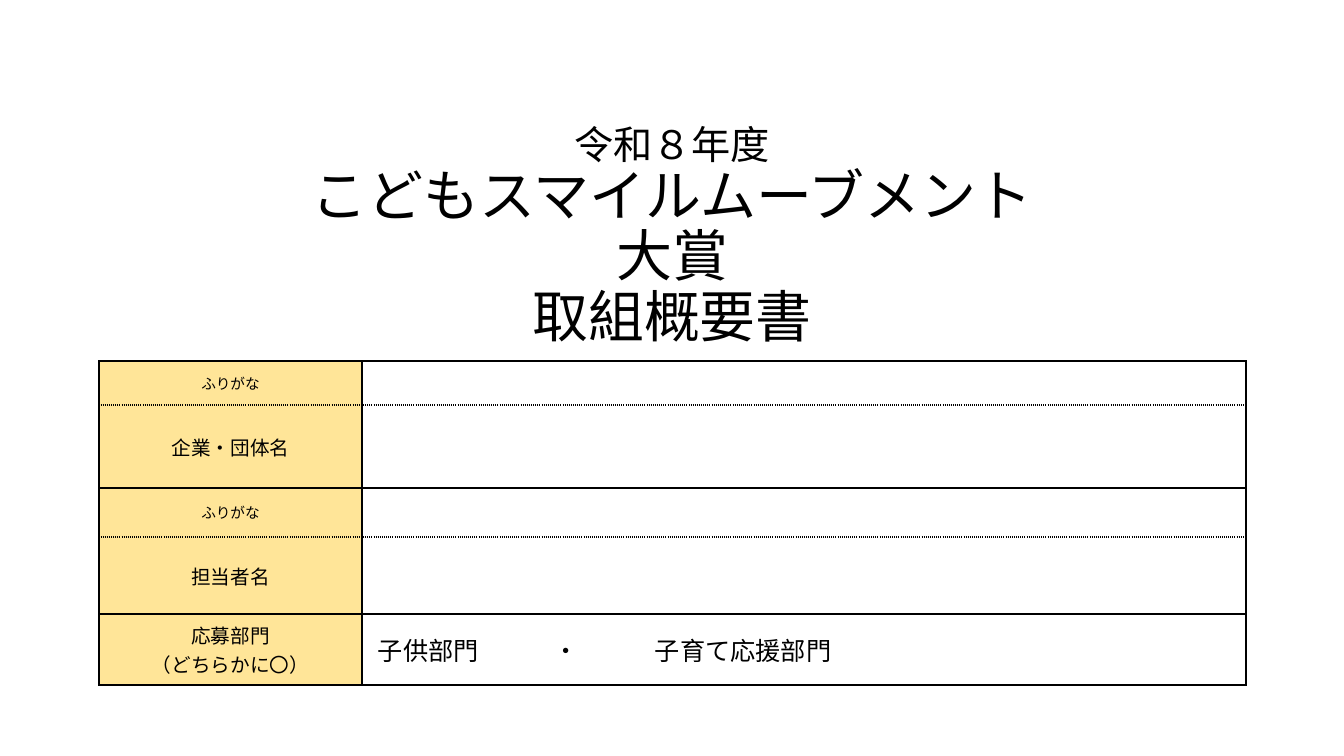
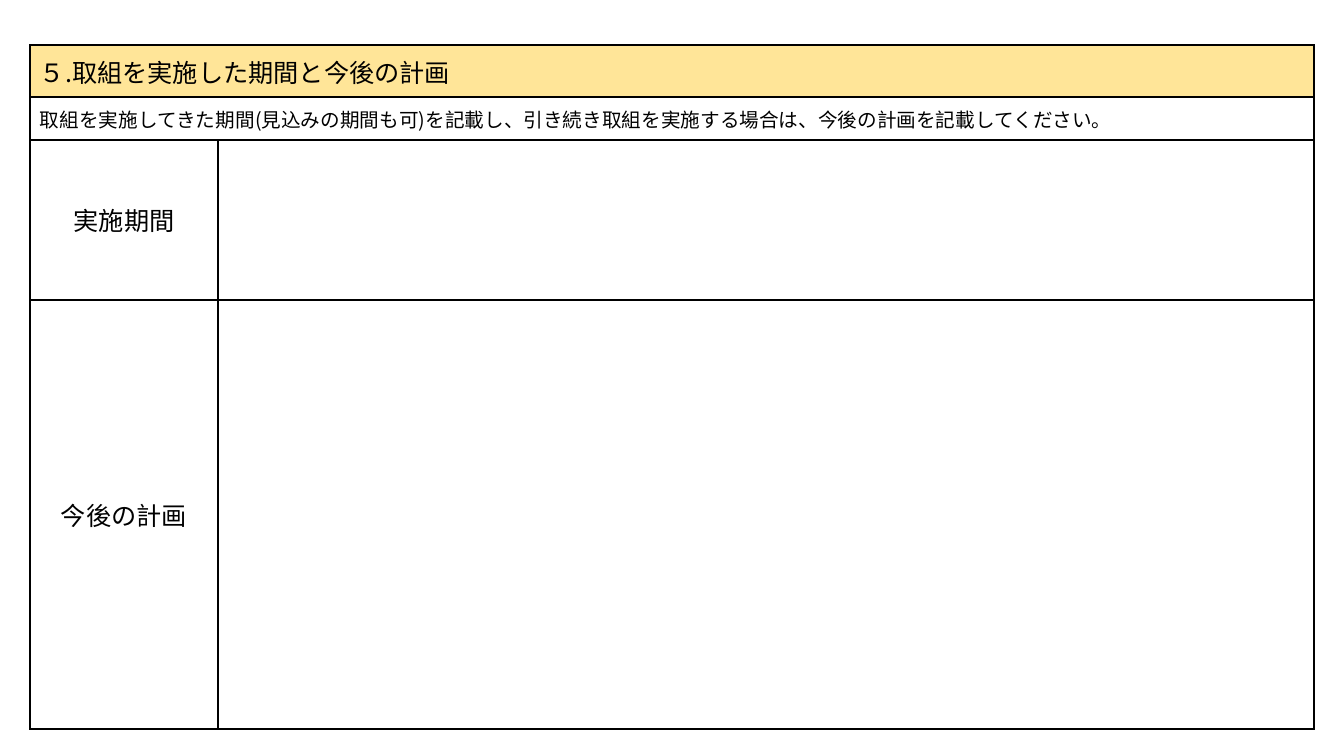
"""Build the award application form: a cover table and a schedule table."""
import lxml.etree
import pptx
import pptx.dml.color
import pptx.enum.text
import pptx.oxml.ns
import pptx.util

PX = 12192000 / 1344
FONT = "Noto Sans CJK JP"
BLACK = pptx.dml.color.RGBColor(0x00, 0x00, 0x00)
WHITE = pptx.dml.color.RGBColor(0xFF, 0xFF, 0xFF)
LABEL_YELLOW = pptx.dml.color.RGBColor(0xFF, 0xE5, 0x98)
LEFT = pptx.enum.text.PP_ALIGN.LEFT
CENTER = pptx.enum.text.PP_ALIGN.CENTER
MIDDLE = pptx.enum.text.MSO_ANCHOR.MIDDLE
qn = pptx.oxml.ns.qn


def format_run(run, size):
    run.font.size = pptx.util.Pt(size)
    run.font.name = FONT
    run.font.color.rgb = BLACK
    properties = run.font._element
    east_asian = lxml.etree.SubElement(properties, qn("a:ea"))
    east_asian.set("typeface", FONT)


def add_form(slide, left, top, columns, rows, dotted_rows=()):
    frame = slide.shapes.add_table(
        len(rows), len(columns), round(left * PX), round(top * PX),
        round(sum(columns) * PX), round(sum(rows) * PX))
    table = frame.table
    table.first_row = table.horz_banding = False
    for column, width in zip(table.columns, columns):
        column.width = round(width * PX)
    for index, (row, height) in enumerate(zip(table.rows, rows)):
        row.height = round(height * PX)
        dotted_sides = {"T": index - 1 in dotted_rows, "B": index in dotted_rows}
        for cell in row.cells:
            properties = cell._tc.get_or_add_tcPr()
            for side in "LRTB":
                line = lxml.etree.SubElement(properties, qn("a:ln" + side), w="12700")
                fill = lxml.etree.SubElement(line, qn("a:solidFill"))
                lxml.etree.SubElement(fill, qn("a:srgbClr"), val=str(BLACK))
                dash = "sysDot" if dotted_sides.get(side) else "solid"
                lxml.etree.SubElement(line, qn("a:prstDash"), val=dash)
            cell.fill.solid()
            cell.fill.fore_color.rgb = WHITE
    return table


presentation = pptx.Presentation()
presentation.slide_width = round(1344 * PX)
presentation.slide_height = round(756 * PX)

cover = presentation.slides.add_slide(presentation.slide_layouts[5])
title = cover.shapes.title
title.left, title.top, title.width, title.height = (
    round(length * PX) for length in (296, 135, 752, 205))
title.text_frame.text = "令和８年度\vこどもスマイルムーブメント大賞\v取組概要書"
title.text_frame.word_wrap = True
title.text_frame.auto_size = pptx.enum.text.MSO_AUTO_SIZE.NONE
title.text_frame.vertical_anchor = MIDDLE
paragraph = title.text_frame.paragraphs[0]
paragraph.alignment = CENTER
paragraph.line_spacing = 0.9
for run, size in zip(paragraph.runs, (28, 40, 40)):
    format_run(run, size)
for line_break, size in zip(paragraph._p.findall(qn("a:br")), (28, 40)):
    lxml.etree.SubElement(line_break, qn("a:rPr"), sz=str(size * 100))

applicant_table = add_form(cover, 99, 361, (263, 884), (44, 83, 49, 77, 71), (0, 2))
schedule = presentation.slides.add_slide(presentation.slide_layouts[6])
schedule_table = add_form(schedule, 30, 45, (188, 1096), (52, 43, 160, 429))
for row in (0, 1):
    schedule_table.cell(row, 0).merge(schedule_table.cell(row, 1))

cell_texts = (
    (applicant_table, 0, 0, "ふりがな", 10.5, CENTER, LABEL_YELLOW, 16, 0),
    (applicant_table, 1, 0, "企業・団体名", 14, CENTER, LABEL_YELLOW, 16, 5),
    (applicant_table, 2, 0, "ふりがな", 10.5, CENTER, LABEL_YELLOW, 16, 5),
    (applicant_table, 3, 0, "担当者名", 14, CENTER, LABEL_YELLOW, 16, 5),
    (applicant_table, 4, 0, "応募部門\n（どちらかに〇）", 14, CENTER, LABEL_YELLOW, 6, 5),
    (applicant_table, 4, 1, "子供部門\t・\t子育て応援部門", 18, LEFT, WHITE, 16, 5),
    (schedule_table, 0, 0, "５.取組を実施した期間と今後の計画", 18, LEFT, LABEL_YELLOW, 10, 5),
    (schedule_table, 1, 0, "取組を実施してきた期間(見込みの期間も可)を記載し、"
     "引き続き取組を実施する場合は、今後の計画を記載してください。", 14, LEFT, WHITE, 10, 5),
    (schedule_table, 2, 0, "実施期間", 18, CENTER, WHITE, 10, 5),
    (schedule_table, 3, 0, "今後の計画", 18, CENTER, WHITE, 10, 5),
)
for table, row, column, text, size, alignment, color, side_margin, end_margin in cell_texts:
    cell = table.cell(row, column)
    cell.fill.fore_color.rgb = color
    cell.vertical_anchor = MIDDLE
    cell.margin_left = cell.margin_right = round(side_margin * PX)
    cell.margin_top = cell.margin_bottom = round(end_margin * PX)
    cell.text_frame.text = text
    for paragraph in cell.text_frame.paragraphs:
        paragraph.alignment = alignment
        for run in paragraph.runs:
            format_run(run, size)

division_paragraph = applicant_table.cell(4, 1).text_frame.paragraphs[0]
tab_list = lxml.etree.SubElement(division_paragraph._p.get_or_add_pPr(), qn("a:tabLst"))
for position in (176, 277):
    lxml.etree.SubElement(tab_list, qn("a:tab"), pos=str(round(position * PX)), algn="l")

presentation.save("out.pptx")
